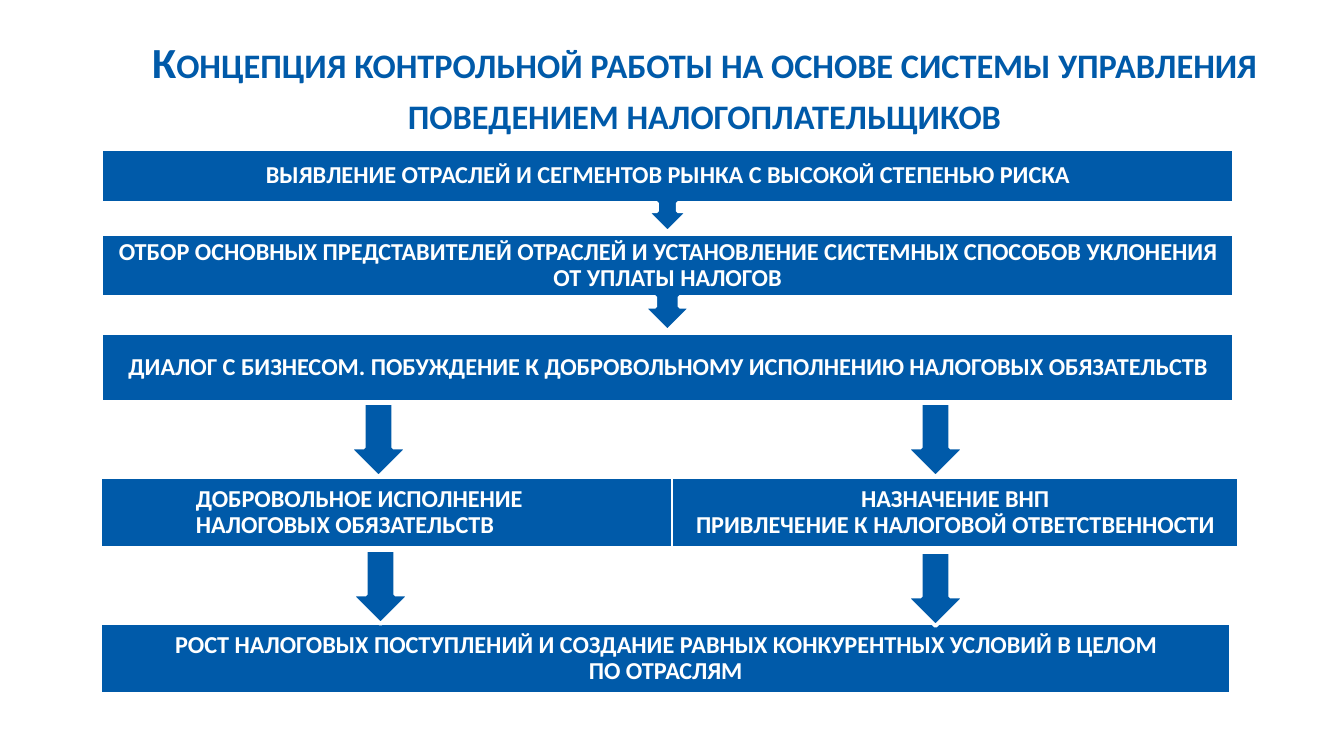
from dataclasses import dataclass

from pptx import Presentation
from pptx.dml.color import RGBColor
from pptx.enum.shapes import MSO_SHAPE as Preset
from pptx.enum.text import MSO_ANCHOR as Anchor, MSO_AUTO_SIZE as AutoSize, PP_ALIGN as Align
from pptx.util import Emu, Pt

EMU_PER_PX = 914400 / 134.4
BLUE, WHITE = "005AA9", "FFFFFF"
FONT = "Calibri"
LEFT, FULL_WIDTH, BOX_HEIGHT = 101, 1133, 69
ARROW_WIDTH, ARROW_HEIGHT = 59, 74


@dataclass
class Step:
    lines: list[str]
    left: int
    top: int
    width: int
    height: int = BOX_HEIGHT
    preset: Preset = Preset.RECTANGLE
    border: float = 0.75
    inset: int = 15
    align: Align = Align.CENTER


@dataclass
class Arrow:
    left: int
    top: int


def px(length: int) -> Emu:
    return Emu(round(length * EMU_PER_PX))


def color(code: str) -> RGBColor:
    return RGBColor.from_string(code)


def place(shape, left: int, top: int, width: int, height: int) -> None:
    shape.left, shape.top = px(left), px(top)
    shape.width, shape.height = px(width), px(height)


def set_frame(frame, side: int, edge: int) -> None:
    frame.word_wrap = True
    frame.auto_size = AutoSize.NONE
    frame.vertical_anchor = Anchor.MIDDLE
    frame.margin_left = frame.margin_right = px(side)
    frame.margin_top = frame.margin_bottom = px(edge)


def set_font(para, size: int, code: str) -> None:
    para.font.name = FONT
    para.font.size = Pt(size)
    para.font.bold = True
    para.font.color.rgb = color(code)


def add_block(slide, preset: Preset, left: int, top: int, width: int, height: int, border: float):
    block = slide.shapes.add_shape(preset, px(left), px(top), px(width), px(height))
    block.shadow.inherit = False
    block.fill.solid()
    block.fill.fore_color.rgb = color(BLUE)
    block.line.color.rgb = color(WHITE)
    block.line.width = Pt(border)
    return block


def add_step(slide, step: Step) -> None:
    box = add_block(slide, step.preset, step.left, step.top, step.width, step.height, step.border)
    frame = box.text_frame
    set_frame(frame, step.inset, 8)
    if step.align == Align.LEFT:
        frame.margin_right = 0
    frame.text = "\n".join(step.lines)
    for para in frame.paragraphs:
        para.alignment = step.align
        para.line_spacing = 0.9
        set_font(para, 13, WHITE)


def add_arrow(slide, arrow: Arrow) -> None:
    add_block(slide, Preset.DOWN_ARROW, arrow.left, arrow.top, ARROW_WIDTH, ARROW_HEIGHT, 2)


def add_title(slide, text: str) -> None:
    title = slide.shapes.title
    place(title, LEFT, 71, 1207, 32)
    set_frame(title.text_frame, 12, 5)
    title.text_frame.text = text
    para = title.text_frame.paragraphs[0]
    para.alignment = Align.CENTER
    set_font(para, 23, BLUE)
    # Small capitals have no public property
    para.runs[0]._r.get_or_add_rPr().set("cap", "small")


STEPS = [
    # Shared steps, each leading down to the next
    Step(["ДИАЛОГ С БИЗНЕСОМ. ПОБУЖДЕНИЕ К ДОБРОВОЛЬНОМУ ИСПОЛНЕНИЮ НАЛОГОВЫХ ОБЯЗАТЕЛЬСТВ"],
         LEFT, 333, FULL_WIDTH, border=2, inset=13),
    Step(["ОТБОР ОСНОВНЫХ ПРЕДСТАВИТЕЛЕЙ ОТРАСЛЕЙ И УСТАНОВЛЕНИЕ СИСТЕМНЫХ СПОСОБОВ "
          "УКЛОНЕНИЯ ОТ УПЛАТЫ НАЛОГОВ"],
         LEFT, 234, FULL_WIDTH, 97, Preset.DOWN_ARROW_CALLOUT, 2, 13),
    Step(["ВЫЯВЛЕНИЕ ОТРАСЛЕЙ И СЕГМЕНТОВ РЫНКА С ВЫСОКОЙ СТЕПЕНЬЮ РИСКА"],
         LEFT, 149, FULL_WIDTH, 83, Preset.DOWN_ARROW_CALLOUT, 2, 13),
    # Two outcomes
    Step(["ДОБРОВОЛЬНОЕ ИСПОЛНЕНИЕ", "НАЛОГОВЫХ ОБЯЗАТЕЛЬСТВ"],
         LEFT, 478, 571, inset=95, align=Align.LEFT),
    Step(["НАЗНАЧЕНИЕ ВНП", "ПРИВЛЕЧЕНИЕ К НАЛОГОВОЙ ОТВЕТСТВЕННОСТИ"], 672, 478, 566),
    # Result
    Step(["РОСТ НАЛОГОВЫХ ПОСТУПЛЕНИЙ И СОЗДАНИЕ РАВНЫХ КОНКУРЕНТНЫХ УСЛОВИЙ В ЦЕЛОМ",
          "ПО ОТРАСЛЯМ"], LEFT, 624, 1129),
]
ARROWS = [Arrow(349, 403), Arrow(906, 403), Arrow(906, 552), Arrow(351, 550)]


def main() -> None:
    deck = Presentation()
    deck.slide_width, deck.slide_height = px(1344), px(756)
    page = deck.slides.add_slide(deck.slide_layouts[5])
    add_title(page, "Концепция контрольной работы на основе системы управления "
                    "поведением налогоплательщиков")
    for step in STEPS:
        add_step(page, step)
    for arrow in ARROWS:
        add_arrow(page, arrow)
    deck.save("out.pptx")


if __name__ == "__main__":
    main()
